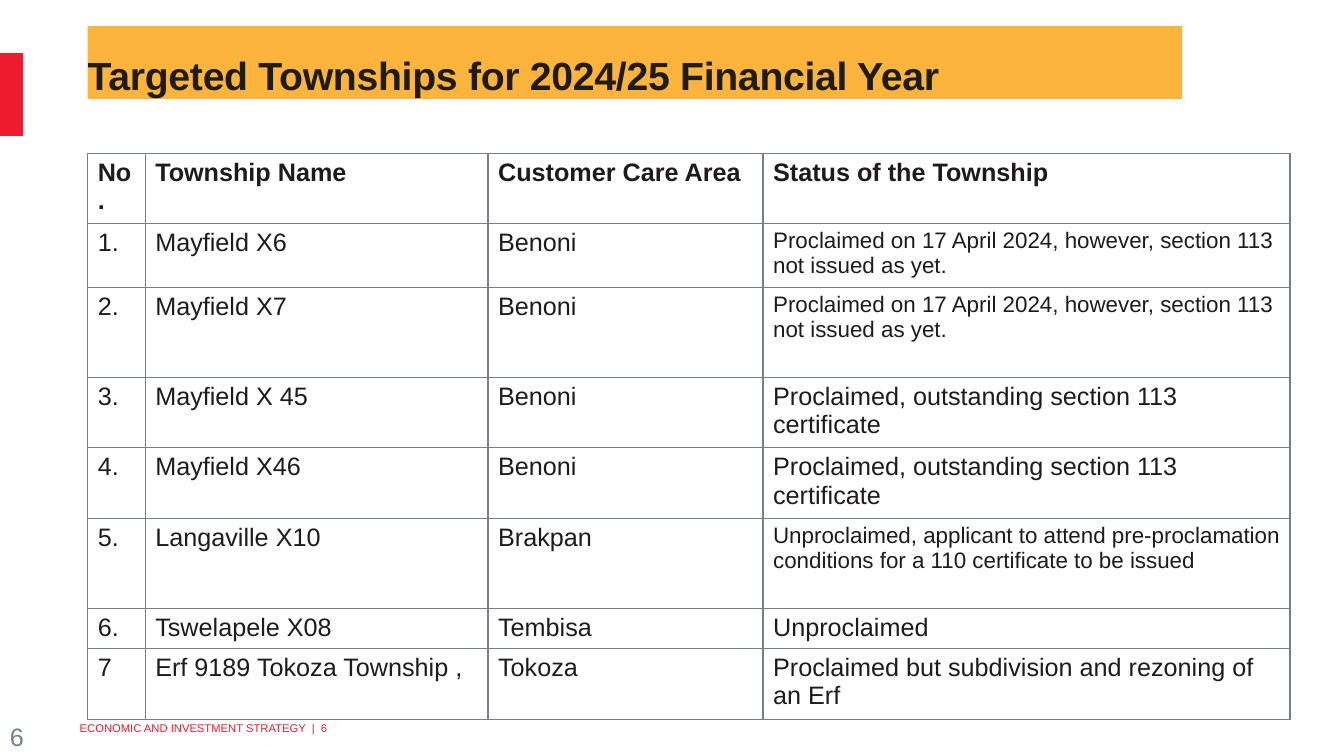
from typing import NamedTuple

from lxml.etree import SubElement
from pptx import Presentation
from pptx.dml.color import RGBColor
from pptx.enum.shapes import MSO_SHAPE
from pptx.enum.text import MSO_ANCHOR, MSO_AUTO_SIZE, PP_ALIGN
from pptx.oxml import parse_xml
from pptx.oxml.ns import nsdecls, qn
from pptx.util import Cm, Pt

RED, AMBER, INK, GREY = "ED1B2E", "FDB43D", "1E1C1A", "768083"
LEFT = 2.21
COLUMN_WIDTHS = (1.45, 8.64, 6.93, 13.28)
HEADINGS = ("No.", "Township Name", "Customer Care Area", "Status of the Township")


class Township(NamedTuple):
    number: str
    name: str
    area: str
    status: str
    height: float = 1.75
    status_size: int = 18
    align: PP_ALIGN = PP_ALIGN.LEFT


SECTION_113 = "Proclaimed on 17 April 2024, however, section 113 not issued as yet."
OUTSTANDING = "Proclaimed, outstanding section 113 certificate"
TOWNSHIPS = (
    Township("1.", "Mayfield X6", "Benoni", SECTION_113, 1.58, 16),
    Township("2.", "Mayfield X7", "Benoni", SECTION_113, 2.26, 16),
    Township("3.", "Mayfield X 45", "Benoni", OUTSTANDING),
    Township("4.", "Mayfield X46", "Benoni", OUTSTANDING),
    Township("5.", "Langaville X10", "Brakpan",
             "Unproclaimed, applicant to attend pre-proclamation conditions "
             "for a 110 certificate to be issued", 2.26, 16, PP_ALIGN.JUSTIFY),
    Township("6.", "Tswelapele X08", "Tembisa", "Unproclaimed", 1.02),
    Township("7", "Erf 9189 Tokoza Township ,", "Tokoza",
             "Proclaimed but subdivision and rezoning of an Erf"),
)


def rgb(value: str) -> RGBColor:
    return RGBColor.from_string(value)


def write(tf, text: str, size: int, color: str, bold: bool = False,
          align: PP_ALIGN = PP_ALIGN.LEFT):
    p = tf.paragraphs[0]
    p.add_run().text = text
    p.alignment = align
    p.font.name, p.font.size, p.font.bold = "Arial", Pt(size), bold
    p.font.color.rgb = rgb(color)
    return p


def clear_margins(tf) -> None:
    tf.margin_left = tf.margin_right = tf.margin_top = tf.margin_bottom = 0


def add_text(s, left: float, top: float, width: float, height: float,
             text: str, size: int, color: str):
    tf = s.shapes.add_textbox(Cm(left), Cm(top), Cm(width), Cm(height)).text_frame
    tf.word_wrap = True
    write(tf, text, size, color)
    return tf


def add_title(s) -> None:
    title = s.shapes.title
    title.left, title.top, title.width, title.height = map(Cm, (LEFT, 0.66, 27.58, 1.83))
    title.fill.solid()
    title.fill.fore_color.rgb = rgb(AMBER)
    tf = title.text_frame
    clear_margins(tf)
    tf.word_wrap, tf.auto_size = True, MSO_AUTO_SIZE.NONE
    tf.vertical_anchor = MSO_ANCHOR.BOTTOM
    p = write(tf, "Targeted Townships for 2024/25 Financial Year", 28, INK, True)
    p.line_spacing = 0.9
    p.runs[0].font._element.set("spc", "-20")


def add_borders(cell) -> None:
    tc_pr = cell._tc.get_or_add_tcPr()
    for i, side in enumerate("LRTB"):
        ln = parse_xml(f'<a:ln{side} {nsdecls("a")} w="{Pt(1)}"/>')
        fill = SubElement(ln, qn("a:solidFill"))
        SubElement(fill, qn("a:srgbClr"), val=GREY)
        tc_pr.insert(i, ln)


def add_cell(cell, text: str, size: int = 18, bold: bool = False,
             align: PP_ALIGN = PP_ALIGN.LEFT) -> None:
    cell.fill.background()
    add_borders(cell)
    write(cell.text_frame, text, size, INK, bold, align)


def add_township_table(s) -> None:
    heights = (1.75, *(t.height for t in TOWNSHIPS))
    table = s.shapes.add_table(len(heights), len(HEADINGS), Cm(LEFT), Cm(3.86),
                               Cm(sum(COLUMN_WIDTHS)), Cm(sum(heights))).table
    table.horz_banding = table.first_row = False
    for column, width in zip(table.columns, COLUMN_WIDTHS):
        column.width = Cm(width)
    for row, height in zip(table.rows, heights):
        row.height = Cm(height)
    for c, heading in enumerate(HEADINGS):
        add_cell(table.cell(0, c), heading, bold=True)
    for r, t in enumerate(TOWNSHIPS, 1):
        for c, text in enumerate((t.number, t.name, t.area)):
            add_cell(table.cell(r, c), text)
        add_cell(table.cell(r, 3), t.status, t.status_size, align=t.align)


def main() -> None:
    prs = Presentation()
    prs.slide_width, prs.slide_height = Cm(33.87), Cm(19.05)
    s = prs.slides.add_slide(prs.slide_layouts[5])

    footer = add_text(s, 2.01, 18.06, 12.14, 0.58,
                      "ECONOMIC AND INVESTMENT STRATEGY  |  6", 8, RED)
    clear_margins(footer)
    footer.vertical_anchor = MSO_ANCHOR.MIDDLE

    bar = s.shapes.add_shape(MSO_SHAPE.RECTANGLE, 0, Cm(1.35), Cm(0.56), Cm(2.06))
    bar.shadow.inherit = False
    bar.fill.solid()
    bar.fill.fore_color.rgb = bar.line.color.rgb = rgb(RED)
    bar.line.width = Pt(0.75)

    add_text(s, 0, 18.06, 0.74, 0.71, "6", 18, GREY)
    add_title(s)
    add_township_table(s)
    prs.save("out.pptx")


if __name__ == "__main__":
    main()
